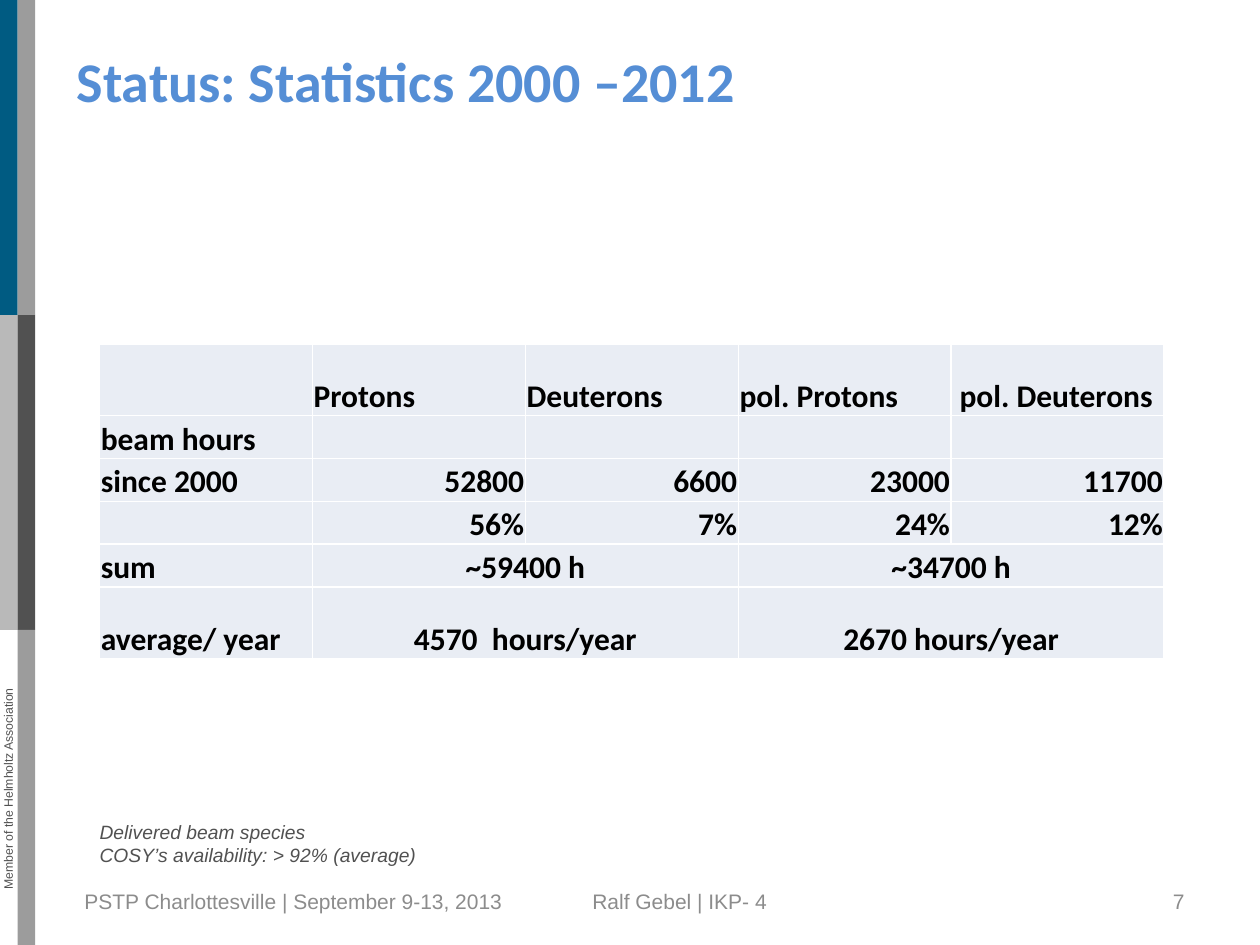
"""Build the beam statistics slide for 2000-2012."""
from lxml import etree
from pptx import Presentation
from pptx.dml.color import RGBColor
from pptx.enum.shapes import MSO_SHAPE
from pptx.enum.text import MSO_ANCHOR, PP_ALIGN
from pptx.oxml.ns import qn
from pptx.util import Inches, Pt

RECTANGLE = MSO_SHAPE.RECTANGLE
TOP, MIDDLE, BOTTOM = MSO_ANCHOR.TOP, MSO_ANCHOR.MIDDLE, MSO_ANCHOR.BOTTOM
LEFT, CENTER, RIGHT = PP_ALIGN.LEFT, PP_ALIGN.CENTER, PP_ALIGN.RIGHT
TITLE_BLUE = RGBColor(0x55, 0x8E, 0xD5)
BAND_BLUE = RGBColor(0x00, 0x5B, 0x82)
LIGHT_GRAY = RGBColor(0xB9, 0xB9, 0xB9)
MID_GRAY = RGBColor(0x9C, 0x9C, 0x9C)
DARK_GRAY = RGBColor(0x51, 0x51, 0x51)
FOOTER_GRAY = RGBColor(0x8C, 0x8C, 0x8C)
CELL_FILL = RGBColor(0xE9, 0xED, 0xF4)
BLACK = RGBColor(0x00, 0x00, 0x00)


def write(frame, text, size=12, color=FOOTER_GRAY, font="Arial", align=LEFT,
          bold=False, italic=False):
    for index, line in enumerate(text.split("\n")):
        paragraph = frame.add_paragraph() if index else frame.paragraphs[0]
        paragraph.alignment = align
        run = paragraph.add_run()
        run.text = line
        run.font.name = font
        run.font.size = Pt(size)
        run.font.color.rgb = color
        run.font.bold = bold
        run.font.italic = italic


def add_frame(left, top, width, height, anchor=TOP, insets=(0.1, 0.05, 0.1, 0.05), rotation=0):
    box = slide.shapes.add_textbox(Inches(left), Inches(top), Inches(width), Inches(height))
    box.rotation = rotation
    frame = box.text_frame
    frame.word_wrap = True
    frame.vertical_anchor = anchor
    (frame.margin_left, frame.margin_top,
     frame.margin_right, frame.margin_bottom) = map(Inches, insets)
    return frame


deck = Presentation()
deck.slide_width, deck.slide_height = Inches(10), Inches(7.5)
slide = deck.slides.add_slide(deck.slide_layouts[6])

for column, row, color in [(0, 1, LIGHT_GRAY), (1, 1, DARK_GRAY), (0, 0, BAND_BLUE),
                           (1, 0, MID_GRAY), (1, 2, MID_GRAY)]:
    band = slide.shapes.add_shape(RECTANGLE, Inches(0.14 * column), Inches(2.5 * row),
                                  Inches(0.14), Inches(2.5))
    band.shadow.inherit = False
    band.fill.solid()
    band.fill.fore_color.rgb = color
    band.line.fill.background()

membership = add_frame(-1.18, 6.2, 2.49, 0.12, insets=(0, 0, 0, 0), rotation=270)
write(membership, "Member of the Helmholtz Association", size=7, color=DARK_GRAY, align=CENTER)

title = add_frame(0.51, 0.29, 7.24, 0.69, anchor=MIDDLE)
write(title, "Status: Statistics 2000 –2012", size=32, color=TITLE_BLUE, font="Calibri", bold=True)

page_number = add_frame(7.17, 6.95, 2.33, 0.4, anchor=MIDDLE)
write(page_number, "7", align=RIGHT)

beam_note = add_frame(0.79, 6.51, 3.09, 0.59, insets=(0, 0, 0, 0))
write(beam_note, "Delivered beam species\nCOSY’s availability: > 92% (average)",
      size=11, color=DARK_GRAY, italic=True)

STATISTICS = [
    (0.57, LEFT, ["", "Protons", "Deuterons", "pol. Protons", " pol. Deuterons"]),
    (0.34, LEFT, ["beam hours", "", "", "", ""]),
    (0.34, RIGHT, ["since 2000", "52800", "6600", "23000", "11700"]),
    (0.34, RIGHT, ["", "56%", "7%", "24%", "12%"]),
    (0.34, CENTER, ["sum", "~59400 h", "", "~34700 h", ""]),
    (0.57, CENTER, ["average/ year", "4570  hours/year", "", "2670 hours/year", ""]),
]
statistics = slide.shapes.add_table(len(STATISTICS), 5, Inches(0.79), Inches(2.73),
                                    Inches(8.46), Inches(2.5)).table
for column in statistics.columns:
    column.width = Inches(1.69)
for row, (height, align, texts) in enumerate(STATISTICS):
    statistics.rows[row].height = Inches(height)
    for column, text in enumerate(texts):
        cell = statistics.cell(row, column)
        cell.margin_left = cell.margin_top = cell.margin_right = Inches(0.01)
        cell.margin_bottom = 0
        cell.vertical_anchor = BOTTOM
        if text:
            write(cell.text_frame, text, size=18, color=BLACK, font="Calibri", bold=True,
                  align=align if column else LEFT)
        for side in ("a:lnL", "a:lnR", "a:lnT", "a:lnB"):
            border = etree.SubElement(cell._tc.get_or_add_tcPr(), qn(side), w=str(Pt(1)))
            border_fill = etree.SubElement(border, qn("a:solidFill"))
            etree.SubElement(border_fill, qn("a:srgbClr"), val="FFFFFF")
        cell.fill.solid()
        cell.fill.fore_color.rgb = CELL_FILL
    if align == CENTER:
        for first in (1, 3):
            statistics.cell(row, first).merge(statistics.cell(row, first + 1))

event = add_frame(0.67, 6.95, 3.46, 0.4, anchor=MIDDLE, insets=(0, 0.05, 0.1, 0.05))
write(event, "PSTP Charlottesville | September 9-13, 2013")

speaker = add_frame(4.21, 6.95, 2.37, 0.4, anchor=MIDDLE)
write(speaker, "Ralf Gebel | IKP- 4", align=CENTER)

deck.save("out.pptx")
